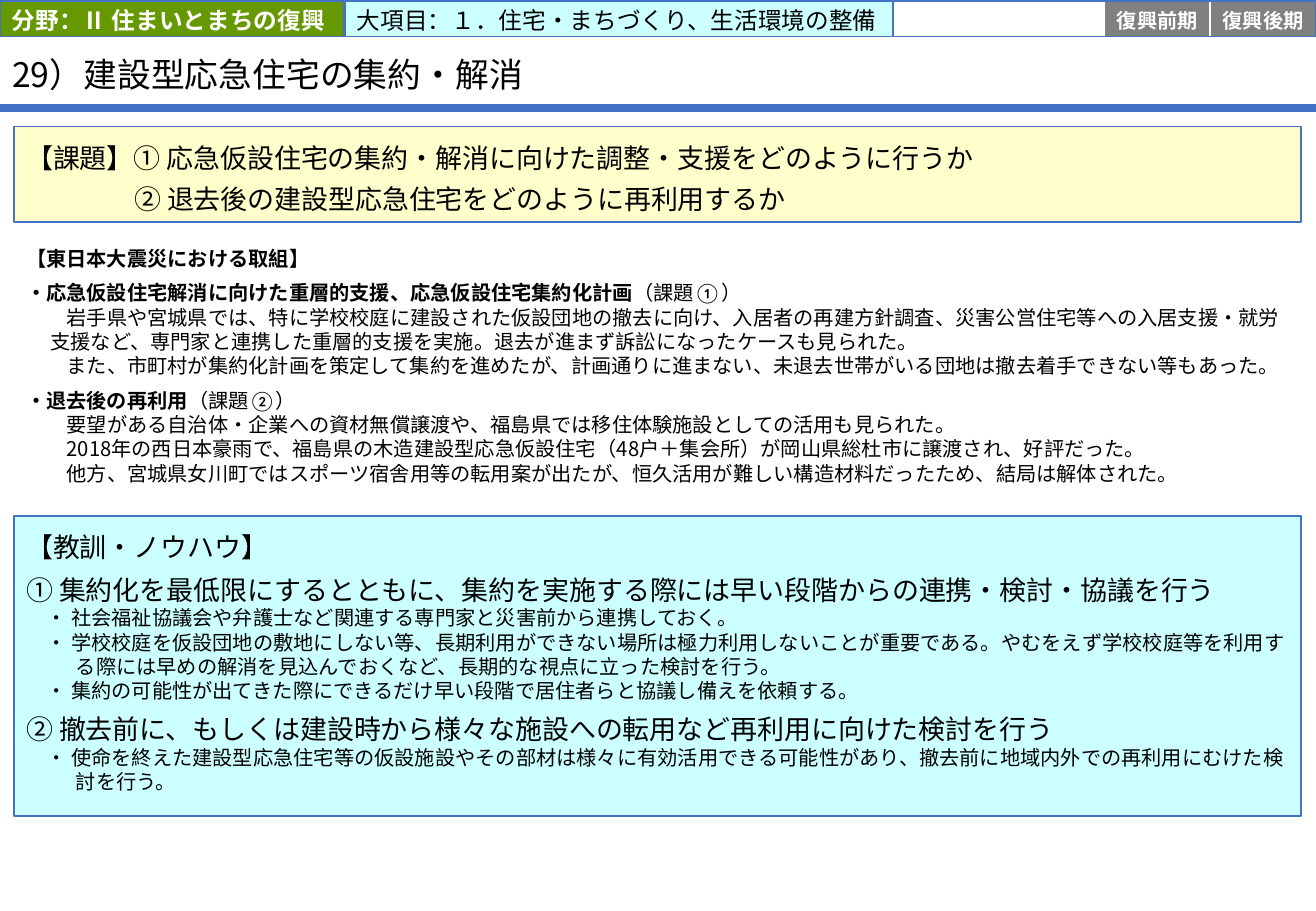
import dataclasses

import pptx
import pptx.dml.color
import pptx.enum.shapes
import pptx.enum.text
import pptx.oxml.ns
import pptx.util
from lxml import etree

Pt = pptx.util.Pt
qn = pptx.oxml.ns.qn
RGB = pptx.dml.color.RGBColor.from_string
PP_ALIGN = pptx.enum.text.PP_ALIGN
MSO_ANCHOR = pptx.enum.text.MSO_ANCHOR


@dataclasses.dataclass(frozen=True)
class Theme:
    blue: str = "4472C4"
    green: str = "669900"
    cyan: str = "CCFFFF"
    yellow: str = "FFFFCC"
    gray: str = "808080"
    white: str = "FFFFFF"
    black: str = "000000"
    title: int = 20
    tag: int = 14
    heading: int = 16
    body: int = 12
    latin: str = "Calibri"
    gothic: str = "Noto Sans CJK JP"


T = Theme()


def box(left, top, width, height, fill=None, line=None):
    sp = s.shapes.add_shape(pptx.enum.shapes.MSO_SHAPE.RECTANGLE,
                            Pt(left), Pt(top), Pt(width), Pt(height))
    sp.shadow.inherit = False
    if fill:
        sp.fill.solid()
        sp.fill.fore_color.rgb = RGB(fill)
    else:
        sp.fill.background()
    if line:
        sp.line.color.rgb = RGB(line)
        sp.line.width = Pt(1)
    else:
        sp.line.fill.background()
    return sp


def write(sp, paragraphs, insets, anchor=MSO_ANCHOR.MIDDLE, size=T.body,
          font=T.gothic, color=T.black, bold=False, align=PP_ALIGN.LEFT, spacing=None):
    """Fill a shape with (runs, overrides) pairs; a run is (text, bold)."""
    tf = sp.text_frame
    tf.word_wrap = True
    tf.auto_size = pptx.enum.text.MSO_AUTO_SIZE.NONE
    tf.vertical_anchor = anchor
    tf.margin_left, tf.margin_top, tf.margin_right, tf.margin_bottom = map(Pt, insets)
    for i, (runs, style) in enumerate(paragraphs):
        p = tf.add_paragraph() if i else tf.paragraphs[0]
        p.alignment = align
        p.space_before = Pt(style.get("before", 0))
        if spacing:
            p.line_spacing = spacing
        left, first = style.get("indent", (0, 0))
        pPr = p._p.get_or_add_pPr()
        pPr.set("marL", str(Pt(left)))
        pPr.set("indent", str(Pt(first - left)))
        for text, heavy in [(runs, bold)] if isinstance(runs, str) else runs:
            r = p.add_run()
            r.text = text
            r.font.size = Pt(style.get("size", size))
            r.font.bold = heavy
            r.font.color.rgb = RGB(color)
            r.font.name = style.get("font", font)
            ea = etree.SubElement(r._r.get_or_add_rPr(), qn("a:ea"))
            ea.set("typeface", r.font.name)


prs = pptx.Presentation()
prs.slide_width, prs.slide_height = Pt(780), Pt(540)
s = prs.slides.add_slide(prs.slide_layouts[5])

# Title and rule
title = s.shapes.title
title.left, title.top, title.width, title.height = Pt(0), Pt(23), Pt(682.5), Pt(41.8)
write(title, [("29）建設型応急住宅の集約・解消", {})], (7.2, 2.9, 7.2, 0),
      size=T.title, spacing=0.9)
rule = s.shapes.add_connector(pptx.enum.shapes.MSO_CONNECTOR.STRAIGHT,
                              Pt(0), Pt(64), Pt(780), Pt(64))
rule.line.color.rgb = RGB(T.blue)
rule.line.width = Pt(4.5)
etree.SubElement(rule._element.spPr, qn("a:effectLst"))

# Header band
BAND_TOP, BAND_HEIGHT = 0.7, 20.9
for left, width, fill, color, bold, text in [
    (0, 203.8, T.green, T.white, True, "分野：Ⅱ 住まいとまちの復興"),
    (204.5, 326, T.cyan, T.black, False, "大項目：１．住宅・まちづくり、生活環境の整備"),
]:
    tag = box(left, BAND_TOP, width, BAND_HEIGHT, fill, T.blue)
    write(tag, [(text, {})], (7.2, 1.4, 7.2, 0),
          size=T.tag, font=T.latin, color=color, bold=bold)

PHASE_LEFT, PHASE_WIDTH = 529.2, 62.7
phases = ["", "", "復興前期", "復興後期"]
for i, phase in enumerate(phases):
    cell = box(PHASE_LEFT + i * PHASE_WIDTH, BAND_TOP, PHASE_WIDTH, BAND_HEIGHT,
               T.gray if phase else T.white, T.white)
    if phase:
        write(cell, [(phase, {})], (0, 1.4, 0, 0), font=T.latin,
              color=T.white, bold=True, align=PP_ALIGN.CENTER)
box(PHASE_LEFT, BAND_TOP, PHASE_WIDTH * len(phases), BAND_HEIGHT, line=T.blue)

# Content panels
PANEL_LEFT, PANEL_WIDTH = 8.4, 762.6

issues = box(PANEL_LEFT, 74.9, PANEL_WIDTH, 56.9, T.yellow, T.blue)
write(issues, [
    ("【課題】① 応急仮設住宅の集約・解消に向けた調整・支援をどのように行うか", {}),
    ("② 退去後の建設型応急住宅をどのように再利用するか", {"indent": (64, 64)}),
], (7.2, 8.6, 7.2, 8.6), size=T.heading, spacing=Pt(24))

topic = {"font": T.latin, "before": 6}
hanging = {"indent": (14.4, 24)}
plain = {"indent": (24, 24)}
efforts = box(PANEL_LEFT, 142.6, PANEL_WIDTH, 148.3, T.white)
write(efforts, [
    ([("【東日本大震災における取組】", True)], {"font": T.latin}),
    ([("・応急仮設住宅解消に向けた重層的支援、応急仮設住宅集約化計画", True),
      ("（課題①）", False)], topic),
    ("岩手県や宮城県では、特に学校校庭に建設された仮設団地の撤去に向け、入居者の再建方針調査、"
     "災害公営住宅等への入居支援・就労支援など、専門家と連携した重層的支援を実施。"
     "退去が進まず訴訟になったケースも見られた。", hanging),
    ("また、市町村が集約化計画を策定して集約を進めたが、計画通りに進まない、"
     "未退去世帯がいる団地は撤去着手できない等もあった。", hanging),
    ([("・退去後の再利用", True), ("（課題②）", False)], topic),
    ("要望がある自治体・企業への資材無償譲渡や、福島県では移住体験施設としての活用も見られた。", plain),
    ("2018年の西日本豪雨で、福島県の木造建設型応急仮設住宅（48戸＋集会所）が"
     "岡山県総杜市に譲渡され、好評だった。", plain),
    ("他方、宮城県女川町ではスポーツ宿舎用等の転用案が出たが、"
     "恒久活用が難しい構造材料だったため、結局は解体された。", plain),
], (7.2, 3.6, 7.2, 3.6))

lesson = {"size": T.heading, "before": 6}
item = {"indent": (29.5, 12)}
lessons = box(PANEL_LEFT, 306, PANEL_WIDTH, 177.6, T.cyan, T.blue)
write(lessons, [
    ("【教訓・ノウハウ】", {"size": T.heading}),
    ("① 集約化を最低限にするとともに、集約を実施する際には早い段階からの連携・検討・協議を行う", lesson),
    ("・ 社会福祉協議会や弁護士など関連する専門家と災害前から連携しておく。", item),
    ("・ 学校校庭を仮設団地の敷地にしない等、長期利用ができない場所は極力利用しないことが重要である。"
     "やむをえず学校校庭等を利用する際には早めの解消を見込んでおくなど、"
     "長期的な視点に立った検討を行う。", item),
    ("・ 集約の可能性が出てきた際にできるだけ早い段階で居住者らと協議し備えを依頼する。", item),
    ("② 撤去前に、もしくは建設時から様々な施設への転用など再利用に向けた検討を行う", lesson),
    ("・ 使命を終えた建設型応急住宅等の仮設施設やその部材は様々に有効活用できる可能性があり、"
     "撤去前に地域内外での再利用にむけた検討を行う。", item),
], (7.2, 8.6, 7.2, 0), anchor=MSO_ANCHOR.TOP)

prs.save("out.pptx")
